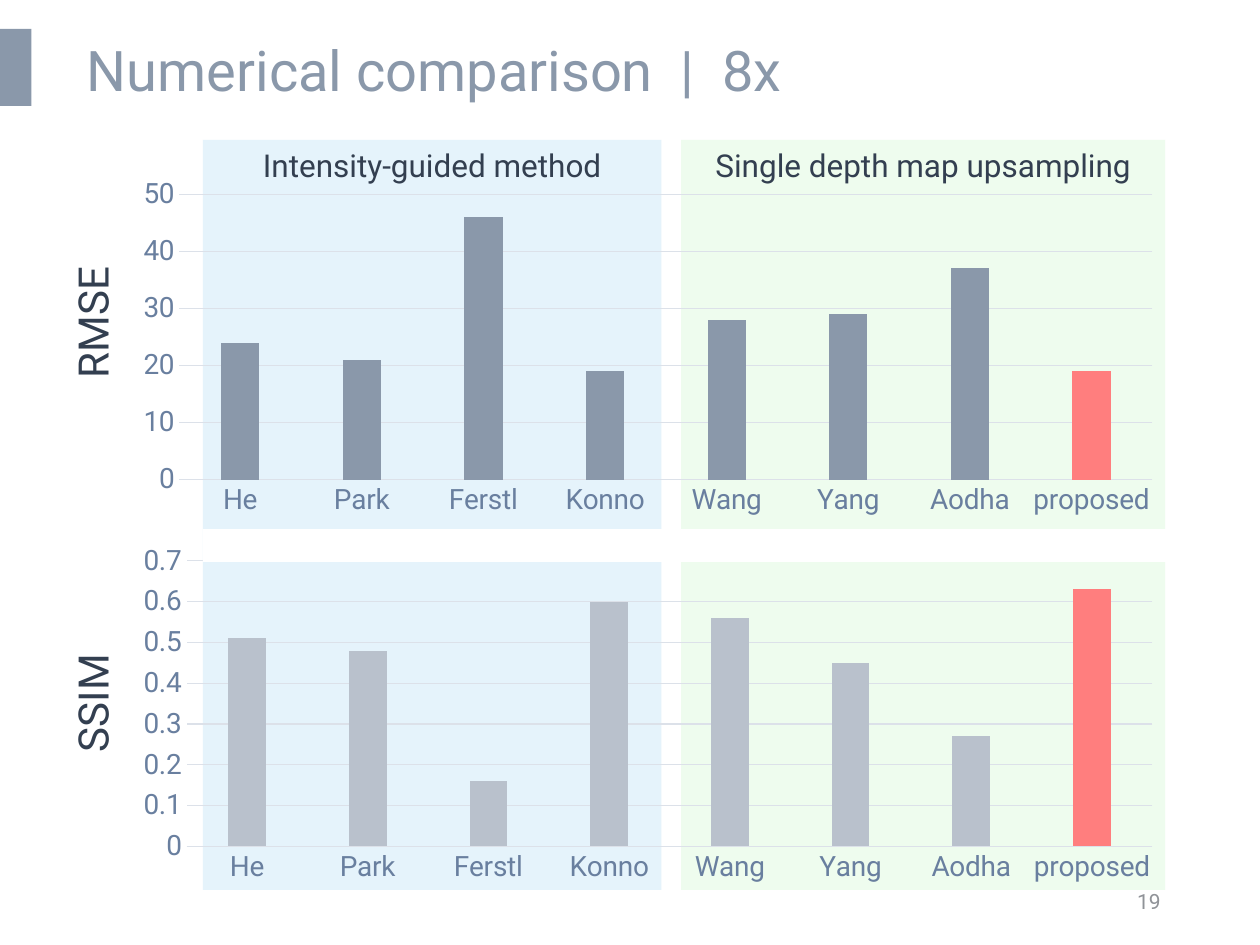
import pptx
import pptx.chart.data
import pptx.dml.color
import pptx.enum.chart
import pptx.enum.text
import pptx.enum.shapes
import pptx.util

Pt = pptx.util.Pt
ALIGN = pptx.enum.text.PP_ALIGN
FONT = "Roboto"
SLATE, SILVER, CORAL = "8A98AA", "B9C1CC", "FF7E7E"
DARK, AXIS, GRID = "333F50", "697F9F", "DCE1E9"


def rgb(color):
    return pptx.dml.color.RGBColor.from_string(color)


def set_all(obj, values):
    for name, value in values.items():
        setattr(obj, name, value)


class Deck:
    def __init__(self, width, height):
        self.prs = pptx.Presentation()
        set_all(self.prs, {"slide_width": Pt(width), "slide_height": Pt(height)})
        self.s = self.prs.slides.add_slide(self.prs.slide_layouts[6])

    def style_font(self, font, size, color):
        set_all(font, {"name": FONT, "size": Pt(size)})
        font.color.rgb = rgb(color)

    def rect(self, x, y, w, h, color):
        sp = self.s.shapes.add_shape(
            pptx.enum.shapes.MSO_SHAPE.RECTANGLE, Pt(x), Pt(y), Pt(w), Pt(h))
        sp.shadow.inherit = False
        sp.fill.solid()
        sp.fill.fore_color.rgb = rgb(color)
        sp.line.fill.background()

    def text(self, x, y, w, h, text, size, color=DARK, align=ALIGN.CENTER,
             rotation=0, spacing=None, **frame):
        sp = self.s.shapes.add_textbox(Pt(x), Pt(y), Pt(w), Pt(h))
        sp.rotation = rotation
        tf = sp.text_frame
        set_all(tf, {"word_wrap": True, **frame})
        p = tf.paragraphs[0]
        set_all(p, {"alignment": align, "line_spacing": spacing})
        r = p.add_run()
        r.text = text
        self.style_font(r.font, size, color)

    def line(self, fmt, color):
        fmt.color.rgb = rgb(color)
        fmt.width = Pt(0.75)

    def columns(self, x, y, w, h, cats, vals, color, top, step):
        data = pptx.chart.data.CategoryChartData()
        data.categories = cats
        data.add_series("Series 1", vals)
        chart = self.s.shapes.add_chart(
            pptx.enum.chart.XL_CHART_TYPE.COLUMN_CLUSTERED,
            Pt(x), Pt(y), Pt(w), Pt(h), data).chart
        set_all(chart, {"has_legend": False, "has_title": False})
        self.style_font(chart.font, 10, DARK)

        # Columns, with the last one highlighted
        plot = chart.plots[0]
        set_all(plot, {"gap_width": 219, "overlap": -27, "vary_by_categories": False})
        series = plot.series[0]
        last = series.points[len(vals) - 1]
        for part, fill_color in ((series, color), (last, CORAL)):
            part.format.fill.solid()
            part.format.fill.fore_color.rgb = rgb(fill_color)

        # Axes and gridlines
        for axis in (chart.category_axis, chart.value_axis):
            no_tick = pptx.enum.chart.XL_TICK_MARK.NONE
            set_all(axis, {"major_tick_mark": no_tick, "minor_tick_mark": no_tick})
            self.style_font(axis.tick_labels.font, 16, AXIS)
        self.line(chart.category_axis.format.line, GRID)
        axis = chart.value_axis
        set_all(axis, {"minimum_scale": 0, "maximum_scale": top,
                       "major_unit": step, "has_major_gridlines": True})
        set_all(axis.tick_labels, {"number_format": "General",
                                   "number_format_is_linked": False})
        self.line(axis.major_gridlines.format.line, GRID)
        axis.format.line.fill.background()


def main():
    deck = Deck(720, 540)
    middle = pptx.enum.text.MSO_ANCHOR.MIDDLE
    grow = pptx.enum.text.MSO_AUTO_SIZE.SHAPE_TO_FIT_TEXT

    # Accent bar and method group backgrounds
    deck.rect(0, 16.5, 18, 44, SLATE)
    groups = [
        (116, 262, "E5F3FB", "Intensity-guided method"),
        (389.3, 276.5, "EEFCEE", "Single depth map upsampling"),
    ]
    for x, w, color, _ in groups:
        deck.rect(x, 80, w, 428.5, color)

    # Title and slide number
    deck.text(49.7, 0.7, 620.6, 82, "Numerical comparison  |  8x", 32, SLATE,
              ALIGN.LEFT, spacing=0.9, vertical_anchor=middle, margin_left=0)
    deck.text(508.3, 500.4, 162, 28.8, "19", 12, "909398", ALIGN.RIGHT,
              vertical_anchor=middle)

    # Charts and their rotated names
    cats = ["He", "Park", "Ferstl", "Konno", "Wang", "Yang", "Aodha", "proposed"]
    charts = [
        ("RMSE", 98, 166.3, [24, 21, 46, 19, 28, 29, 37, 19], SLATE, 50, 10),
        ("SSIM", 307.5, 383.8, [0.51, 0.48, 0.16, 0.6, 0.56, 0.45, 0.27, 0.63],
         SILVER, 0.7, 0.1),
    ]
    for name, y, name_y, vals, color, top, step in charts:
        deck.columns(70, y, 600.5, 201, cats, vals, color, top, step)
        deck.text(10.8, name_y, 83.5, 36, name, 24, rotation=270, auto_size=grow)

    # Group headings
    for x, w, _, heading in groups:
        deck.text(x, 80, w, 29, heading, 18, auto_size=grow)

    # White band between the charts
    deck.rect(116, 302.4, 554.4, 18.7, "FFFFFF")

    deck.prs.save("out.pptx")


if __name__ == "__main__":
    main()
